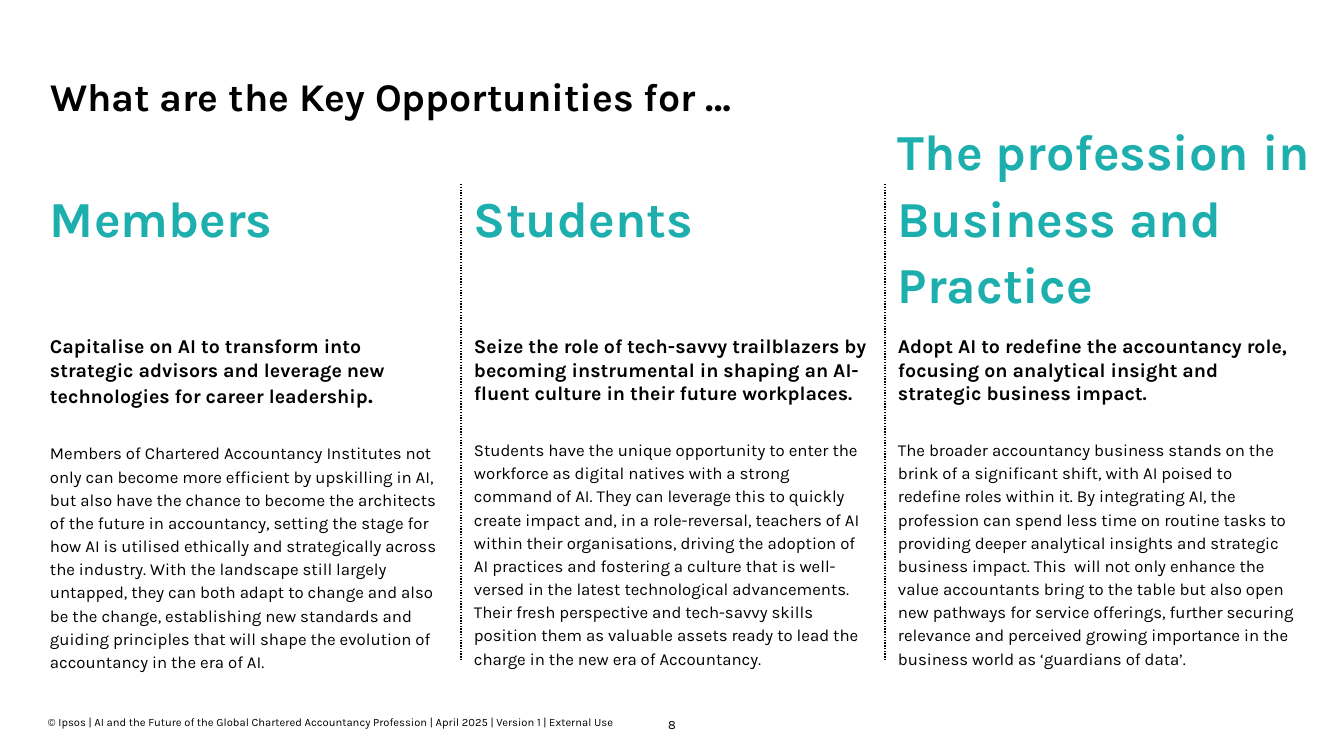
from lxml import etree
from pptx import Presentation
from pptx.dml.color import RGBColor
from pptx.enum.dml import MSO_LINE
from pptx.enum.shapes import MSO_CONNECTOR
from pptx.enum.text import MSO_ANCHOR, PP_ALIGN
from pptx.oxml.ns import qn
from pptx.util import Emu, Pt

TOP, MIDDLE, BOTTOM = MSO_ANCHOR.TOP, MSO_ANCHOR.MIDDLE, MSO_ANCHOR.BOTTOM
LEFT, CENTER = PP_ALIGN.LEFT, PP_ALIGN.CENTER
STRAIGHT, DOTTED = MSO_CONNECTOR.STRAIGHT, MSO_LINE.ROUND_DOT

TITLE = "What are the Key Opportunities for …"
FOOTER = ("© Ipsos | AI and the Future of the Global Chartered Accountancy Profession"
          " | April 2025 | Version 1 | External Use")
PAGE_NUMBER = "8"
# Audience, summary as (text, size) runs, detail
COLUMNS = [
    ("Members",
     [("Capitalise on AI to transform into strategic advisors and leverage new "
       "technologies for career leadership", 14), (".", 16)],
     "Members of Chartered Accountancy Institutes not only can become more efficient by "
     "upskilling in AI, but also have the chance to become the architects of the future in "
     "accountancy, setting the stage for how AI is utilised ethically and strategically "
     "across the industry. With the landscape still largely untapped, they can both adapt "
     "to change and also be the change, establishing new standards and guiding principles "
     "that will shape the evolution of accountancy in the era of AI."),
    ("Students",
     [("Seize the role of tech-savvy trailblazers by becoming instrumental in shaping an "
       "AI-fluent culture in their future workplaces.", 14)],
     "Students have the unique opportunity to enter the workforce as digital natives with a "
     "strong command of AI. They can leverage this to quickly create impact and, in a "
     "role-reversal, teachers of AI within their organisations, driving the adoption of AI "
     "practices and fostering a culture that is well-versed in the latest technological "
     "advancements. Their fresh perspective and tech-savvy skills position them as valuable "
     "assets ready to lead the charge in the new era of Accountancy."),
    ("The profession in Business and Practice",
     [("Adopt AI to redefine the accountancy role, focusing on analytical insight and "
       "strategic business impact.", 14)],
     "The broader accountancy business stands on the brink of a significant shift, with AI "
     "poised to redefine roles within it. By integrating AI, the profession can spend less "
     "time on routine tasks to providing deeper analytical insights and strategic business "
     "impact. This  will not only enhance the value accountants bring to the table but also "
     "open new pathways for service offerings, further securing relevance and perceived "
     "growing importance in the business world as ‘guardians of data’."),
]

COLORS = {"text": "000000", "audience": "1DAFAD"}
FONT = "Karla"
PX = 914400 / 100.8
MARGIN, PITCH = 50, 424
COLUMN_WIDTH, AUDIENCE_WIDTH = 397, 419
AUDIENCE_TOP, AUDIENCE_HEIGHT = 117, 194
BODY_TOP, BODY_HEIGHT = 334, 398
DIVIDER_OFFSET, DIVIDER_TOP, DIVIDER_BOTTOM = 13, 184, 660


def px(length):
    return Emu(round(length * PX))


def add_text_box(slide, left, top, width, height, anchor=TOP):
    shape = slide.shapes.add_textbox(px(left), px(top), px(width), px(height))
    frame = shape.text_frame
    settings = {"margin_left": 0, "margin_right": 0, "margin_top": 0, "margin_bottom": 0,
                "word_wrap": True, "vertical_anchor": anchor}
    for name, value in settings.items():
        setattr(frame, name, value)
    return frame


def write(paragraph, runs, color="text", bold=False, **layout):
    """Fill a paragraph with (text, size) runs; layout holds paragraph settings."""
    for name, value in layout.items():
        setattr(paragraph, name, value)
    for text, size in runs:
        run = paragraph.add_run()
        run.text = text
        settings = {"name": FONT, "size": Pt(size), "bold": bold}
        for name, value in settings.items():
            setattr(run.font, name, value)
        run.font.color.rgb = RGBColor.from_string(COLORS[color])


def add_divider(slide, x):
    divider = slide.shapes.add_connector(
        STRAIGHT, px(x), px(DIVIDER_TOP), px(x), px(DIVIDER_BOTTOM))
    divider.line.color.rgb = RGBColor.from_string(COLORS["text"])
    divider.line.width = Pt(1)
    divider.line.dash_style = DOTTED
    etree.SubElement(divider._element.spPr, qn("a:effectLst"))


def add_column(slide, left, audience, summary, detail):
    heading = add_text_box(slide, left, AUDIENCE_TOP, AUDIENCE_WIDTH, AUDIENCE_HEIGHT, MIDDLE)
    write(heading.paragraphs[0], [(audience, 36)], "audience", True, line_spacing=1.1)
    body = add_text_box(slide, left, BODY_TOP, COLUMN_WIDTH, BODY_HEIGHT)
    write(body.paragraphs[0], summary, bold=True)
    write(body.add_paragraph(), [(detail, 12)], line_spacing=1.15, space_before=Pt(23))


def main():
    presentation = Presentation()
    presentation.slide_width, presentation.slide_height = px(1344), px(756)
    slide = presentation.slides.add_slide(presentation.slide_layouts[6])

    title = add_text_box(slide, MARGIN, 78, 1246, 79)
    write(title.paragraphs[0], [(TITLE, 28)], bold=True, line_spacing=0.9)
    for index, column in enumerate(COLUMNS):
        left = MARGIN + index * PITCH
        if index:
            add_divider(slide, left - DIVIDER_OFFSET)
        add_column(slide, left, *column)

    footer = add_text_box(slide, 48, 716, 581, 13, BOTTOM)
    write(footer.paragraphs[0], [(FOOTER, 8)], alignment=LEFT)
    number = add_text_box(slide, 645, 715, 54, 15)
    write(number.paragraphs[0], [(PAGE_NUMBER, 9)], alignment=CENTER, line_spacing=1.1)

    presentation.save("out.pptx")


if __name__ == "__main__":
    main()
